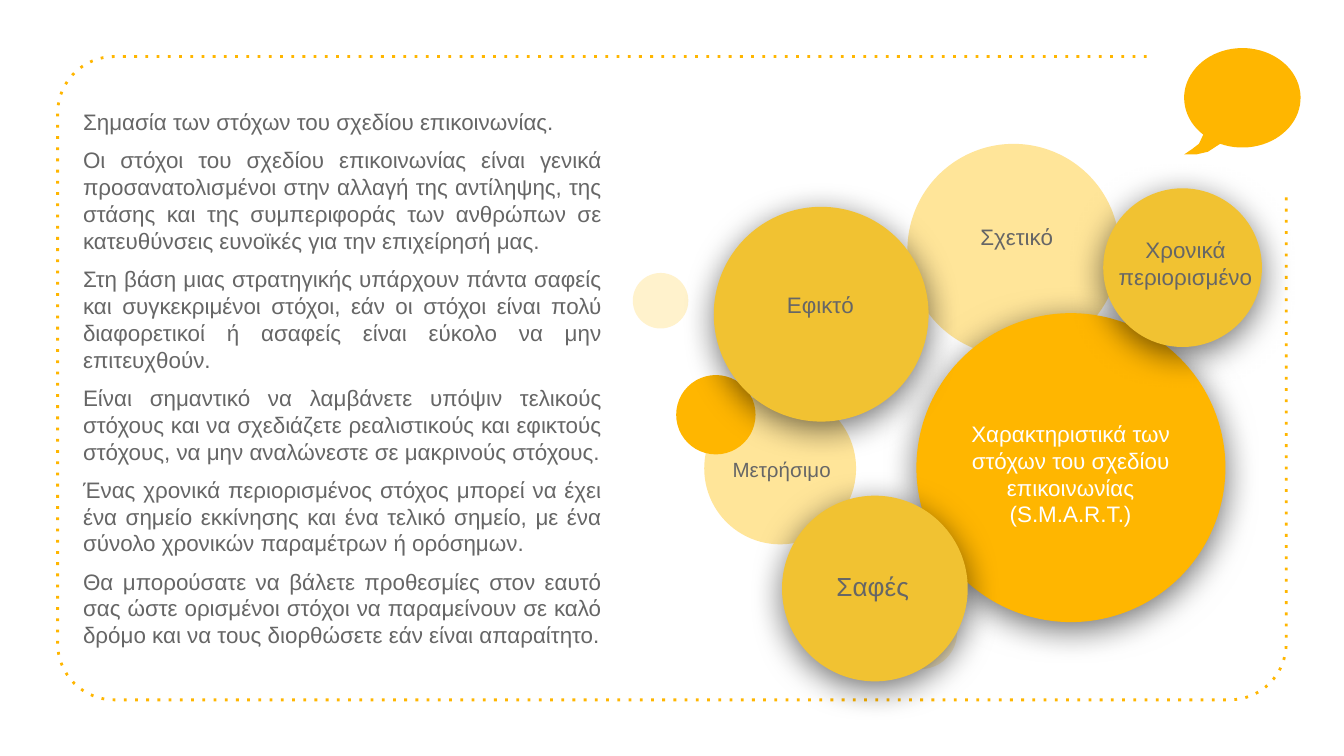
from math import cos, pi, radians, sin

from lxml.etree import SubElement
from pptx import Presentation
from pptx.dml.color import RGBColor
from pptx.enum.shapes import MSO_SHAPE as Preset
from pptx.enum.text import MSO_ANCHOR as Anchor, MSO_AUTO_SIZE as AutoSize, PP_ALIGN as Align
from pptx.oxml.ns import qn
from pptx.util import Cm, Pt

AMBER = RGBColor(0xFF, 0xB6, 0x00)
GOLD = RGBColor(0xF1, 0xC2, 0x32)
SAND = RGBColor(0xFF, 0xE5, 0x99)
CREAM = RGBColor(0xFF, 0xF2, 0xCC)
GREY = RGBColor(0x66, 0x66, 0x66)
WHITE = RGBColor(0xFF, 0xFF, 0xFF)

OBJECTIVES = [
    "Σημασία των στόχων του σχεδίου επικοινωνίας.",
    "Οι στόχοι του σχεδίου επικοινωνίας είναι γενικά προσανατολισμένοι στην αλλαγή της αντίληψης, "
    "της στάσης και της συμπεριφοράς των ανθρώπων σε κατευθύνσεις ευνοϊκές για την επιχείρησή μας.",
    "Στη βάση μιας στρατηγικής υπάρχουν πάντα σαφείς και συγκεκριμένοι στόχοι, εάν οι στόχοι είναι "
    "πολύ διαφορετικοί ή ασαφείς είναι εύκολο να μην επιτευχθούν.",
    "Είναι σημαντικό να λαμβάνετε υπόψιν τελικούς στόχους και να σχεδιάζετε ρεαλιστικούς και "
    "εφικτούς στόχους, να μην αναλώνεστε σε μακρινούς στόχους.",
    "Ένας χρονικά περιορισμένος στόχος μπορεί να έχει ένα σημείο εκκίνησης και ένα τελικό σημείο, "
    "με ένα σύνολο χρονικών παραμέτρων ή ορόσημων.",
    "Θα μπορούσατε να βάλετε προθεσμίες στον εαυτό σας ώστε ορισμένοι στόχοι να παραμείνουν σε "
    "καλό δρόμο και να τους διορθώσετε εάν είναι απαραίτητο.",
]

PLAIN_CIRCLES = [
    (16.69, 11.25, 1.4, CREAM),
    (11.96, 5.16, 1.05, CREAM),
    (13.31, 7.42, 2.87, SAND),
    (17.15, 2.72, 4.01, SAND),
    (12.78, 7.09, 1.5, AMBER),
]

RAISED_CIRCLES = [
    (17.32, 5.92, 5.84, AMBER),
    (13.49, 3.91, 4.06, GOLD),
    (14.78, 9.37, 3.51, GOLD),
    (20.85, 3.56, 3, GOLD),
]

LABELS = [
    (["Χαρακτηριστικά των στόχων του σχεδίου επικοινωνίας", "(S.M.A.R.T.)"],
     18.01, 7.57, 4.45, 2.77, 12, WHITE),
    (["Εφικτό"], 14.12, 4.42, 2.77, 2.69, 12, GREY),
    (["Σαφές"], 15.24, 9.98, 2.51, 2.21, 14, GREY),
    (["Χρονικά περιορισμένο"], 20.65, 3.99, 3.51, 1.98, 12, GREY),
    (["Μετρήσιμο"], 13.39, 7.92, 2.77, 1.91, 11, GREY),
    (["Σχετικό"], 18.01, 3.51, 2.41, 1.91, 12, GREY),
]

BUBBLE_TAIL = [(22.73, 2.57), (22.66, 2.72), (22.53, 2.82), (22.38, 2.92),
               (22.61, 2.92), (22.83, 2.87), (23.06, 2.72)]


def arc(center_x, center_y, radius_x, radius_y, start, end, steps):
    """Return points along an elliptical arc, with angles in degrees clockwise from the right."""
    angles = [radians(start + (end - start) * step / steps) for step in range(steps + 1)]
    return [(center_x + radius_x * cos(a), center_y + radius_y * sin(a)) for a in angles]


class SlideBuilder:
    """Holds the text style and the current slide, and draws each kind of element in cm."""

    font_name = "Arial"
    inset = Cm(0.25)

    def __init__(self, slide):
        self.slide = slide

    def fill_frame(self, frame, texts, size, color, align, anchor, space=0):
        frame.word_wrap = True
        frame.auto_size = AutoSize.NONE
        frame.vertical_anchor = anchor
        frame.margin_left = frame.margin_right = self.inset
        frame.margin_top = frame.margin_bottom = self.inset
        frame.text = "\n".join(texts)
        for paragraph in frame.paragraphs:
            paragraph.alignment = align
            paragraph.space_before = Pt(space)
            paragraph.font.name = self.font_name
            paragraph.font.size = Pt(size)
            paragraph.font.color.rgb = color

    def body(self, texts, left, top, width, height):
        body = self.slide.placeholders[1]
        body.left, body.top, body.width, body.height = map(Cm, (left, top, width, height))
        self.fill_frame(body.text_frame, texts, 12, GREY, Align.JUSTIFY, Anchor.TOP, 6)
        for paragraph in body.text_frame.paragraphs:
            properties = paragraph._p.get_or_add_pPr()
            properties.set("marL", "0")
            properties.set("indent", "0")
            no_bullet = properties.makeelement(qn("a:buNone"), {})
            properties.find(qn("a:defRPr")).addprevious(no_bullet)

    def label(self, texts, left, top, width, height, size, color):
        label = self.slide.shapes.add_textbox(*map(Cm, (left, top, width, height)))
        self.fill_frame(label.text_frame, texts, size, color, Align.CENTER, Anchor.MIDDLE)

    def circle(self, left, top, diameter, color, raised=False):
        circle = self.slide.shapes.add_shape(
            Preset.OVAL, *map(Cm, (left, top, diameter, diameter)))
        circle.fill.solid()
        circle.fill.fore_color.rgb = color
        circle.line.fill.background()
        circle.shadow.inherit = False
        if raised:
            effects = circle._element.spPr.find(qn("a:effectLst"))
            shadow = SubElement(effects, qn("a:outerShdw"), blurRad=str(Pt(18)), dist=str(Pt(4)),
                                dir="5400000", algn="bl", rotWithShape="0")
            black = SubElement(shadow, qn("a:srgbClr"), val="000000")
            SubElement(black, qn("a:alpha"), val="54000")

    def outline(self, points, closed):
        start, *rest = [(Cm(x), Cm(y)) for x, y in points]
        builder = self.slide.shapes.build_freeform(*start)
        builder.add_line_segments(rest, close=closed)
        outline = builder.convert_to_shape()
        outline.shadow.inherit = False
        return outline

    def dotted_frame(self, left, top, right, bottom, radius, gap_left, gap_bottom):
        corners = [(left + radius, top + radius, 270), (left + radius, bottom - radius, 180),
                   (right - radius, bottom - radius, 90)]
        points = [(gap_left, top)]
        for x, y, start in corners:
            points += arc(x, y, radius, radius, start, start - 90, 16)
        frame = self.outline(points + [(right, gap_bottom)], closed=False)
        frame.fill.background()
        frame.line.color.rgb = AMBER
        frame.line.width = Pt(1.5)
        SubElement(frame._element.spPr.find(qn("a:ln")), qn("a:prstDash"), val="dot")

    def bubble(self, center_x, center_y, radius_x, radius_y, tail):
        rim = arc(center_x, center_y, radius_x, radius_y, 112, -228 + 360 * 2 - 20 - 360, 1)[:1]
        rim = arc(center_x, center_y, radius_x, radius_y, 132, 472, 72)
        bubble = self.outline(rim + tail[::-1], closed=True)
        bubble.fill.solid()
        bubble.fill.fore_color.rgb = AMBER
        bubble.line.fill.background()


def main():
    deck = Presentation()
    deck.slide_width, deck.slide_height = Cm(25.4), Cm(14.29)
    slide = deck.slides.add_slide(deck.slide_layouts[1])
    title = slide.shapes.title._element
    title.getparent().remove(title)

    builder = SlideBuilder(slide)
    builder.dotted_frame(1.09, 1.07, 24.31, 13.23, 1.07, 21.67, 3.71)
    for circle in PLAIN_CIRCLES:
        builder.circle(*circle)
    for circle in RAISED_CIRCLES:
        builder.circle(*circle, raised=True)
    builder.bubble(23.48, 1.85, 1.1, 0.94, BUBBLE_TAIL)
    builder.body(OBJECTIVES, 1.32, 1.8, 10.31, 11)
    for label in LABELS:
        builder.label(*label)
    deck.save("out.pptx")


if __name__ == "__main__":
    main()
